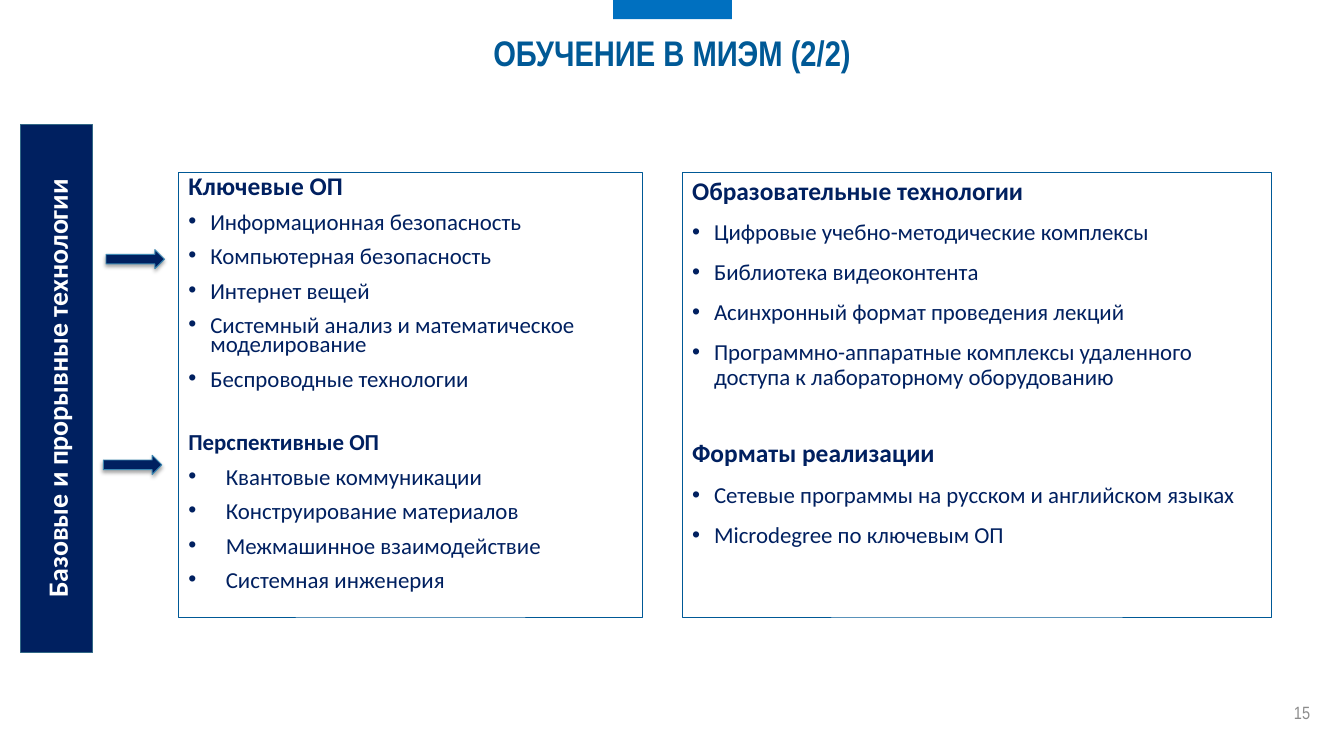
from dataclasses import dataclass

from lxml import etree
from pptx import Presentation
from pptx.dml.color import RGBColor
from pptx.enum.shapes import MSO_SHAPE
from pptx.enum.text import MSO_ANCHOR, PP_ALIGN
from pptx.oxml.ns import qn
from pptx.util import Inches, Pt

RECTANGLE, ARROW = MSO_SHAPE.RECTANGLE, MSO_SHAPE.RIGHT_ARROW
TOP, MIDDLE = MSO_ANCHOR.TOP, MSO_ANCHOR.MIDDLE
LEFT, CENTER, RIGHT = PP_ALIGN.LEFT, PP_ALIGN.CENTER, PP_ALIGN.RIGHT


@dataclass(frozen=True)
class Theme:
    heading_font: str = "Arial Narrow"
    body_font: str = "Calibri"
    navy: str = "002060"
    blue: str = "005996"
    accent: str = "0070C0"
    banner_edge: str = "316886"
    arrow_edge: str = "3D88B2"
    grey: str = "8C8C8C"
    white: str = "FFFFFF"
    title_size: int = 28
    banner_size: int = 22
    heading_size: int = 20
    body_size: int = 18
    number_size: int = 14


THEME = Theme()

# The slide is a grid of 100 columns by 100 rows
WIDTH, HEIGHT = Inches(14.7), Inches(8.27)
PANEL_TOP, PANEL_ROWS = 22.85, 58.77

# Each section: heading, its size, extra space above it, bullet indent, items
PROGRAMMES = [
    ("Ключевые ОП", THEME.heading_size, 0, 0.24, [
        "Информационная безопасность",
        "Компьютерная безопасность",
        "Интернет вещей",
        "Системный анализ и математическое моделирование",
        "Беспроводные технологии",
    ]),
    ("Перспективные ОП", THEME.body_size, 29, 0.41, [
        "Квантовые коммуникации",
        "Конструирование материалов",
        "Межмашинное взаимодействие",
        "Системная инженерия",
    ]),
]
TECHNOLOGIES = [
    ("Образовательные технологии", THEME.heading_size, 0, 0.24, [
        "Цифровые учебно-методические комплексы",
        "Библиотека видеоконтента",
        "Асинхронный формат проведения лекций",
        "Программно-аппаратные комплексы удаленного доступа "
        "к лабораторному оборудованию",
    ]),
    ("Форматы реализации", THEME.heading_size, 34, 0.24, [
        "Сетевые программы на русском и английском языках",
        "Microdegree по ключевым ОП",
    ]),
]


def place(column, row, columns, rows):
    """Turn grid cells into slide lengths."""
    return (int(WIDTH * column / 100), int(HEIGHT * row / 100),
            int(WIDTH * columns / 100), int(HEIGHT * rows / 100))


def add_block(slide, kind, area, fill=None, line=None):
    shape = slide.shapes.add_shape(kind, *area)
    shape.shadow.inherit = False
    if fill:
        shape.fill.solid()
        shape.fill.fore_color.rgb = RGBColor.from_string(fill)
    else:
        shape.fill.background()
    if line:
        shape.line.color.rgb = RGBColor.from_string(line)
        shape.line.width = Pt(0.75)
    else:
        shape.line.fill.background()
    return shape


def set_frame(shape, anchor, side=0.11, edge=0.06):
    frame = shape.text_frame
    frame.word_wrap = True
    frame.vertical_anchor = anchor
    frame.margin_left = frame.margin_right = Inches(side)
    frame.margin_top = frame.margin_bottom = Inches(edge)
    return frame


def add_bullet(paragraph, indent):
    properties = paragraph._p.get_or_add_pPr()
    properties.set("marL", str(Inches(indent)))
    properties.set("indent", str(-Inches(indent)))
    etree.SubElement(properties, qn("a:buFont"), typeface="Arial")
    etree.SubElement(properties, qn("a:buChar"), char="•")


def write(paragraph, text, *, size, color, font=THEME.body_font, bold=False,
          align=LEFT, spacing=1.0, before=0, after=0, bullet=None):
    if bullet:
        add_bullet(paragraph, bullet)
    paragraph.alignment = align
    paragraph.line_spacing = spacing
    paragraph.space_before, paragraph.space_after = Pt(before), Pt(after)
    run = paragraph.add_run()
    run.text = text
    run.font.name, run.font.size, run.font.bold = font, Pt(size), bold
    run.font.color.rgb = RGBColor.from_string(color)


def add_label(slide, area, text, margins=(0.11, 0.06), **text_format):
    box = slide.shapes.add_textbox(*area)
    frame = set_frame(box, MIDDLE, *margins)
    write(frame.paragraphs[0], text, font=THEME.heading_font, **text_format)


def add_panel(slide, column, columns, sections, spacing):
    area = place(column, PANEL_TOP, columns, PANEL_ROWS)
    frame = set_frame(add_block(slide, RECTANGLE, area, line=THEME.blue), TOP)
    paragraph = frame.paragraphs[0]
    for heading, size, before, indent, items in sections:
        if before:
            paragraph = frame.add_paragraph()
        write(paragraph, heading, size=size, color=THEME.navy, bold=True,
              spacing=spacing, before=before, after=6)
        for item in items:
            write(frame.add_paragraph(), item, size=THEME.body_size,
                  color=THEME.navy, spacing=spacing, before=6, after=6,
                  bullet=indent)


def add_banner(slide, area, text):
    """Draw a tall band whose text reads upwards."""
    left, top, width, height = area
    shift = (height - width) // 2
    band = add_block(slide, RECTANGLE,
                     (left - shift, top + shift, height, width),
                     fill=THEME.navy, line=THEME.banner_edge)
    band.rotation = 270
    write(set_frame(band, MIDDLE).paragraphs[0], text, bold=True, after=6,
          size=THEME.banner_size, color=THEME.white, align=CENTER)


def add_arrow(slide, column, row):
    arrow = add_block(slide, ARROW, place(column, row, 4.35, 2.54),
                      fill=THEME.navy, line=THEME.arrow_edge)
    effects = arrow._element.spPr.find(qn("a:effectLst"))
    shadow = etree.SubElement(effects, qn("a:outerShdw"),
                              blurRad=str(Pt(3.1)), dist=str(Pt(1.8)),
                              dir="5400000", rotWithShape="0")
    color = etree.SubElement(shadow, qn("a:srgbClr"), val="000000")
    etree.SubElement(color, qn("a:alpha"), val="35000")


def main():
    presentation = Presentation()
    presentation.slide_width, presentation.slide_height = WIDTH, HEIGHT
    slide = presentation.slides.add_slide(presentation.slide_layouts[6])

    # Page number and title
    add_label(slide, place(93.47, 91.54, 4.76, 5.32), "15",
              size=THEME.number_size, color=THEME.grey, align=RIGHT)
    add_label(slide, place(0, 2.54, 100, 8.71), "ОБУЧЕНИЕ В МИЭМ (2/2)",
              margins=(0, 0), size=THEME.title_size, color=THEME.blue,
              bold=True, align=CENTER)

    # Text panels
    add_panel(slide, 13.27, 34.56, PROGRAMMES, spacing=0.7)
    add_panel(slide, 50.75, 43.88, TECHNOLOGIES, spacing=0.9)

    # Side banner with its arrows
    add_banner(slide, place(1.56, 16.44, 5.31, 69.89),
               "Базовые и прорывные технологии")
    add_arrow(slide, 7.89, 33.01)
    add_arrow(slide, 7.69, 60.22)

    # Accent tab at the top edge
    add_block(slide, RECTANGLE, place(45.61, 0, 8.84, 2.54), fill=THEME.accent)

    presentation.save("out.pptx")


if __name__ == "__main__":
    main()
